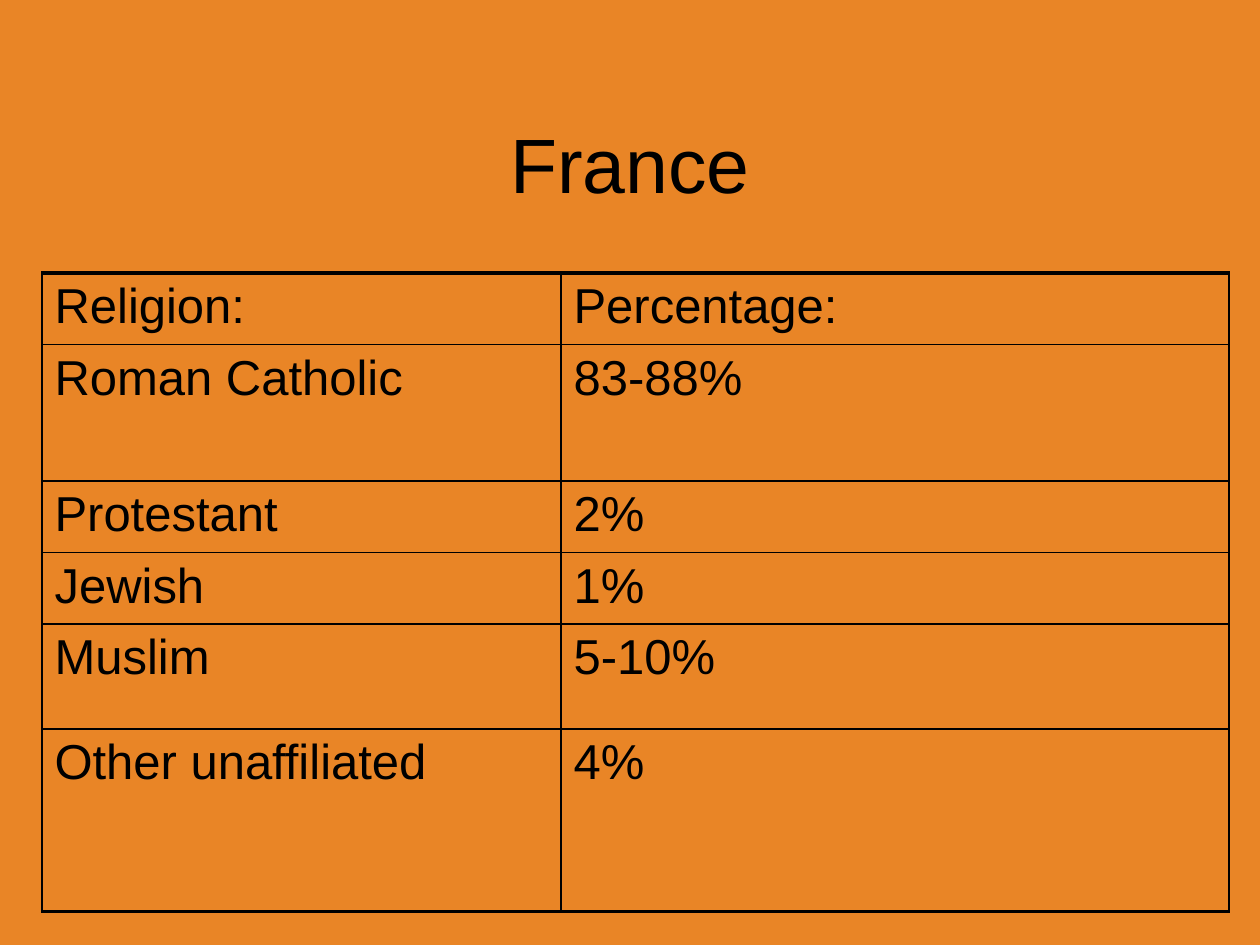
from lxml.etree import SubElement
from pptx import Presentation
from pptx.dml.color import RGBColor
from pptx.enum.text import MSO_ANCHOR, PP_ALIGN
from pptx.oxml.ns import qn
from pptx.util import Pt

TITLE = "France"
RELIGIONS = [
    ("Religion:", "Percentage:", 39),
    ("Roman Catholic", "83-88%", 78),
    ("Protestant", "2%", 39),
    ("Jewish", "1%", 39),
    ("Muslim", "5-10%", 60),
    ("Other unaffiliated", "4%", 104.4),
]
COLUMN_WIDTHS = (296.6, 381.6)
TABLE_LEFT, TABLE_TOP = 24, 156
THEME = {
    "font": "Arial",
    "background": "E98526",
    "ink": "000000",
    "title_size": 44,
    "body_size": 28,
    "inner_line": 1,
    "outer_line": 2.25,
}


def write_text(frame, text, *, size, align=PP_ALIGN.LEFT, anchor=MSO_ANCHOR.TOP):
    """Write one formatted paragraph into a text frame."""
    frame.word_wrap = True
    frame.vertical_anchor = anchor
    paragraph = frame.paragraphs[0]
    paragraph.alignment = align
    run = paragraph.add_run()
    run.text = text
    run.font.size = Pt(size)
    run.font.name = THEME["font"]
    run.font.color.rgb = RGBColor.from_string(THEME["ink"])


def set_borders(cell, widths):
    """Draw solid cell borders from a mapping of side to line width."""
    properties = cell._tc.get_or_add_tcPr()
    for position, side in enumerate("LRTB"):
        line = SubElement(properties, qn(f"a:ln{side}"), w=str(Pt(widths[side])))
        solid = SubElement(line, qn("a:solidFill"))
        SubElement(solid, qn("a:srgbClr"), val=THEME["ink"])
        properties.insert(position, line)


def add_religion_table(slide):
    """Add the table of religions and their percentages."""
    heights = [height for _, _, height in RELIGIONS]
    table = slide.shapes.add_table(
        len(RELIGIONS), len(COLUMN_WIDTHS), Pt(TABLE_LEFT), Pt(TABLE_TOP),
        Pt(sum(COLUMN_WIDTHS)), Pt(sum(heights)),
    ).table
    table.first_row = table.horz_banding = False
    for column, width in zip(table.columns, COLUMN_WIDTHS):
        column.width = Pt(width)
    inner, outer = THEME["inner_line"], THEME["outer_line"]
    last = len(RELIGIONS) - 1
    for row, (religion, percentage, height) in enumerate(RELIGIONS):
        table.rows[row].height = Pt(height)
        borders = {
            "L": inner,
            "R": inner,
            "T": outer if row == 0 else inner,
            "B": outer if row == last else inner,
        }
        for column, text in enumerate((religion, percentage)):
            cell = table.cell(row, column)
            cell.fill.background()
            set_borders(cell, borders)
            write_text(cell.text_frame, text, size=THEME["body_size"])


def main():
    """Build the slide on religion in France."""
    deck = Presentation()
    deck.slide_width, deck.slide_height = Pt(720), Pt(540)
    slide = deck.slides.add_slide(deck.slide_layouts[6])
    slide.background.fill.solid()
    slide.background.fill.fore_color.rgb = RGBColor.from_string(THEME["background"])
    title = slide.shapes.add_textbox(Pt(54), Pt(48), Pt(612), Pt(90))
    write_text(title.text_frame, TITLE, size=THEME["title_size"],
               align=PP_ALIGN.CENTER, anchor=MSO_ANCHOR.MIDDLE)
    add_religion_table(slide)
    deck.save("out.pptx")


if __name__ == "__main__":
    main()
